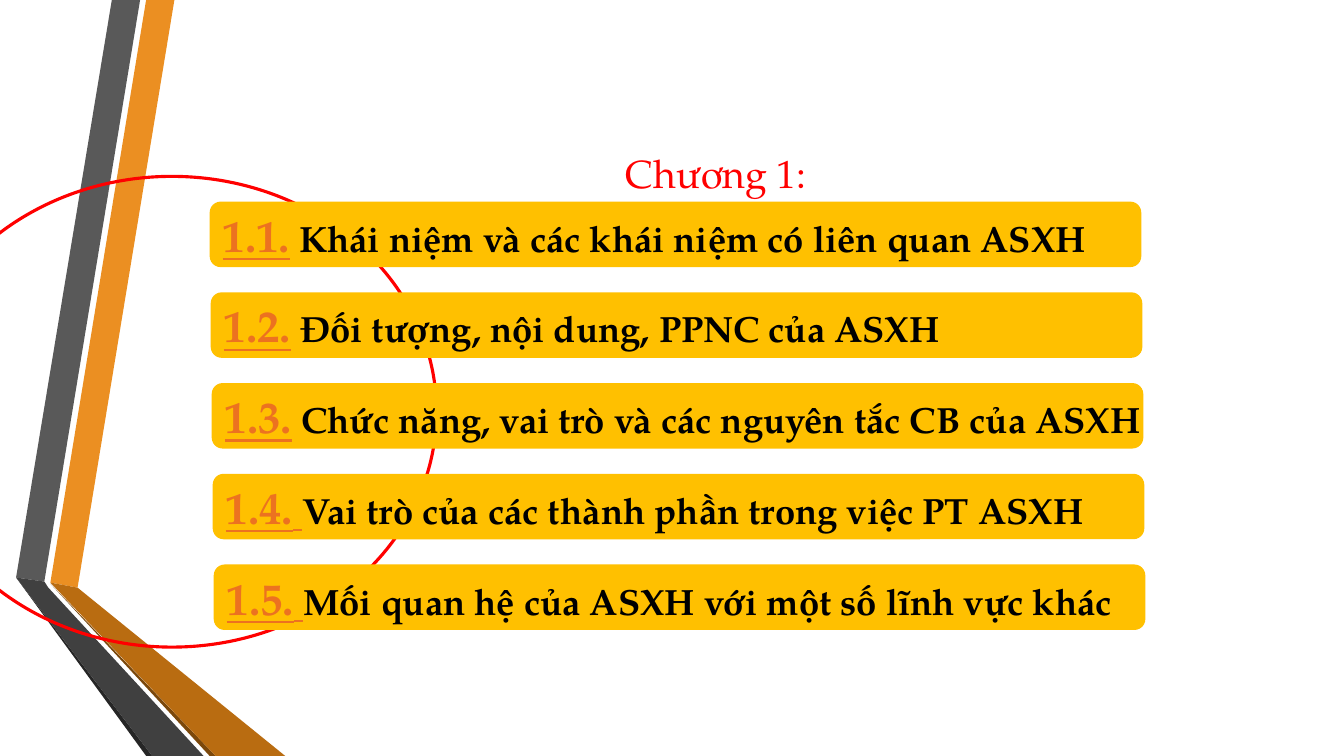
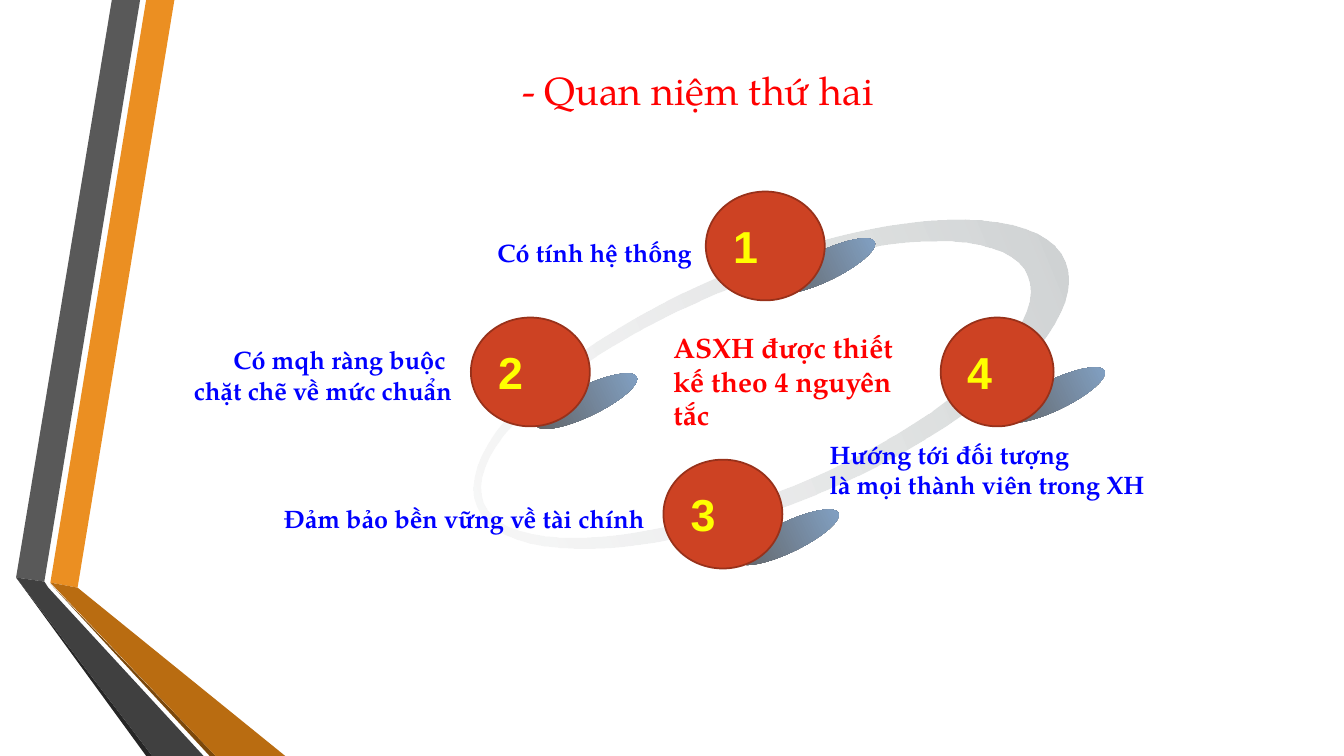
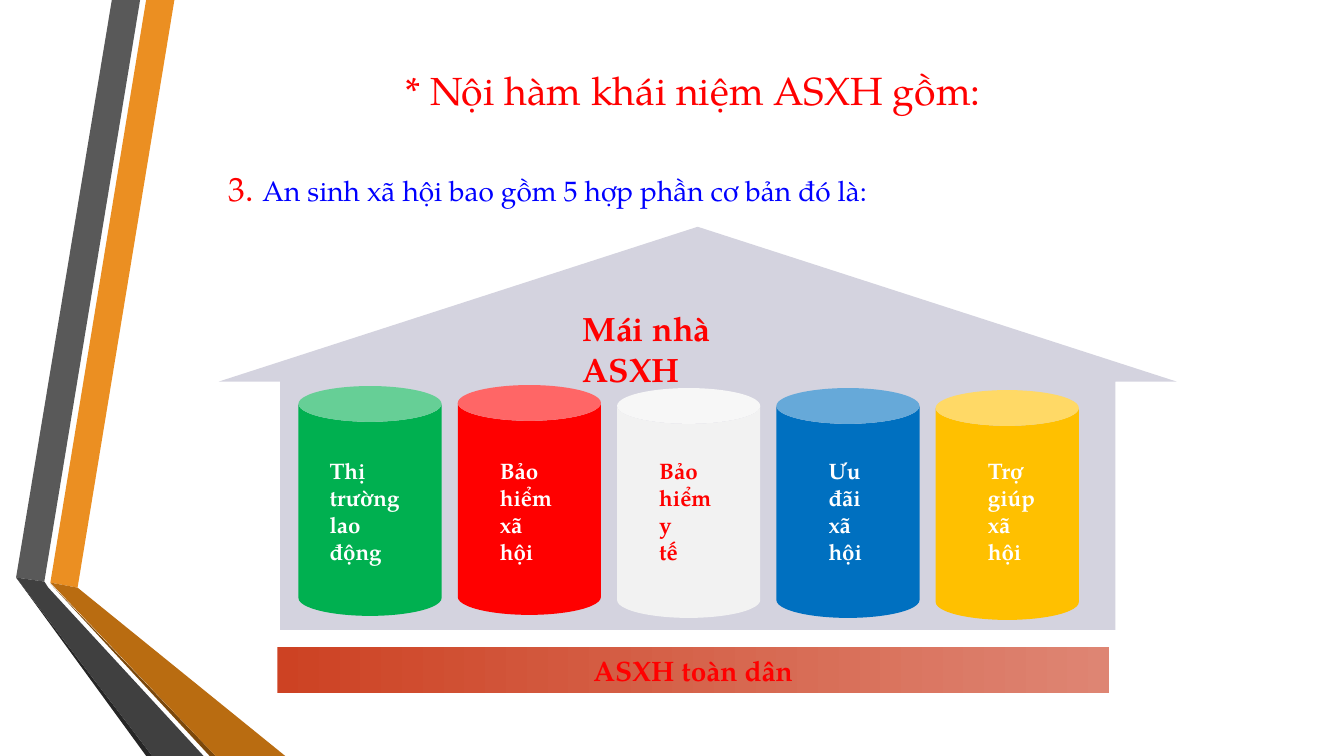
from math import cos, pi, sin

from lxml.etree import SubElement
from pptx import Presentation
from pptx.dml.color import RGBColor
from pptx.enum.shapes import MSO_SHAPE
from pptx.enum.text import MSO_ANCHOR, PP_ALIGN
from pptx.oxml.ns import qn
from pptx.util import Inches, Pt

SERIF = "TeX Gyre Pagella"
RED, BLUE, YELLOW, WHITE, BLACK = "FF0000", "0000FF", "FFFF00", "FFFFFF", "000000"
AMBER, ORANGE, BRICK, DARK_BRICK = "FFC000", "EC7220", "CD4223", "98311A"
rgb = RGBColor.from_string


def paint(shape, *fills, line=None, line_width=1.25):
    """No fill for no colour, a solid for one, a left-to-right gradient for two."""
    shape.shadow.inherit = False
    if len(fills) == 2:
        shape.fill.gradient()
        shape.fill.gradient_angle = 0
        for stop, position, color in zip(shape.fill.gradient_stops, (0, 1), fills):
            stop.position = position
            stop.color.rgb = rgb(color)
    elif fills:
        shape.fill.solid()
        shape.fill.fore_color.rgb = rgb(fills[0])
    else:
        shape.fill.background()
    if line:
        shape.line.color.rgb = rgb(line)
        shape.line.width = Pt(line_width)
    else:
        shape.line.fill.background()


def write(shape, *paragraphs, align=PP_ALIGN.LEFT, anchor=MSO_ANCHOR.TOP,
          bold=True, font=SERIF, wrap=True):
    """Each paragraph is a list of (text, size, colour) runs."""
    frame = shape.text_frame
    frame.word_wrap = wrap
    frame.vertical_anchor = anchor
    for index, runs in enumerate(paragraphs):
        paragraph = frame.add_paragraph() if index else frame.paragraphs[0]
        paragraph.alignment = align
        for text, size, color in runs:
            run = paragraph.add_run()
            run.text = text
            run.font.size = Pt(size)
            run.font.name = font
            run.font.bold = bold
            run.font.color.rgb = rgb(color)


prs = Presentation()
prs.slide_width, prs.slide_height = Inches(13.33), Inches(7.5)
layout = prs.slide_layouts[5]
layout_title = layout.placeholders[0]
layout_title.left, layout_title.top = Inches(2.17), Inches(0.58)
layout_title.width, layout_title.height = Inches(9.5), Inches(0.62)

slides = []
for heading in ("Chương 1:", "- Quan niệm thứ hai", "* Nội hàm khái niệm ASXH gồm: "):
    slide = prs.slides.add_slide(layout)
    write(slide.shapes.title, [(heading, 28, RED)], align=PP_ALIGN.CENTER,
          anchor=MSO_ANCHOR.MIDDLE, bold=False)
    slides.append(slide)
chapter, principles, house = (slide.shapes for slide in slides)

# Ribbons at the left edge, kept on the shared layout behind its placeholders
ribbons = [
    ("EB8F22", [(0.5, 5.78), (0.77, 5.83), (1.73, 0), (1.45, 0)]),
    ("595959", [(1.39, 0), (1.11, 0), (0.16, 5.73), (0.44, 5.77)]),
    ("262626", [(0.16, 5.73), (1.45, 7.5), (1.51, 7.5)]),
    ("7B480B", [(0.5, 5.79), (2.08, 7.5), (2.14, 7.5)]),
    ("B96C11", [(0.5, 5.78), (2.14, 7.5), (2.83, 7.5), (0.77, 5.83)]),
    ("404040", [(2.02, 7.5), (0.48, 5.83), (0.44, 5.77), (0.16, 5.73), (1.51, 7.5)]),
]
for depth, (color, corners) in enumerate(ribbons):
    points = [(Inches(x), Inches(y)) for x, y in corners]
    outline = chapter.build_freeform(*points[0])
    outline.add_line_segments(points[1:])
    ribbon = outline.convert_to_shape()
    paint(ribbon, color)
    layout.shapes.element.insert(2 + depth, ribbon.element)

# Slide 1: chapter contents
chapter_title = chapter.title
chapter_title.left, chapter_title.top = Inches(1.62), Inches(0.75)
chapter_title.width, chapter_title.height = Inches(10.96), Inches(1.92)
big_circle = chapter.add_shape(MSO_SHAPE.OVAL, Inches(-0.92), Inches(1.75),
                               Inches(5.25), Inches(4.67))
paint(big_circle, line=RED, line_width=2.25)

sections = [
    "Khái niệm và các khái niệm có liên quan ASXH",
    "Đối tượng, nội dung, PPNC của ASXH",
    "Chức năng, vai trò và các nguyên tắc CB của ASXH",
    "Vai trò của các thành phần trong việc PT ASXH",
    "Mối quan hệ của ASXH với một số lĩnh vực khác",
]
for index, section in enumerate(sections):
    bar = chapter.add_shape(MSO_SHAPE.ROUNDED_RECTANGLE, Inches(2.08 + 0.01 * index),
                            Inches(2 + 0.9 * index), Inches(9.24), Inches(0.65))
    paint(bar, AMBER)
    write(bar, [(f"1.{index + 1}.", 32, ORANGE), (" ", 26, ORANGE), (section, 26, BLACK)],
          anchor=MSO_ANCHOR.MIDDLE, wrap=False)
    number, gap, _ = bar.text_frame.paragraphs[0].runs
    number.font.underline = True
    gap.font.underline = index >= 3

# Slide 2: four principles on a tilted ring
contours = []
for center_x, center_y, radius_x, radius_y in ((7.65, 3.81, 3.16, 1.18), (7.49, 3.8, 2.92, 1.02)):
    angles = [2 * pi * step / 80 for step in range(80)]
    contours.append([(Inches(center_x + radius_x * cos(a)), Inches(center_y + radius_y * sin(a)))
                     for a in angles])
outer, inner = contours
outline = principles.build_freeform(*outer[0])
outline.add_line_segments(outer[1:])
outline.move_to(*inner[0])
outline.add_line_segments(inner[1:])
ring = outline.convert_to_shape()
paint(ring, "ECEDED", "CDD0D1")
ring.rotation = 337.4
ring_start = ring.element.xpath(".//a:gs/a:srgbClr")[0]
SubElement(ring_start, qn("a:alpha"), val="36000")

for left, top in ((7.62, 2.49), (9.9, 3.77), (7.26, 5.18), (5.26, 3.83)):
    ball_shadow = principles.add_shape(MSO_SHAPE.OVAL, Inches(left), Inches(top),
                                       Inches(1.11), Inches(0.3))
    paint(ball_shadow, "5F5F5F", "84A5CA")
    ball_shadow.rotation = 334.3

balls = [(7, 1.9, 1.18), (4.67, 3.15, 1.18), (6.58, 4.56, 1.18), (9.33, 3.15, 1.12)]
for number, (left, top, width) in enumerate(balls, 1):
    ball = principles.add_shape(MSO_SHAPE.OVAL, Inches(left), Inches(top),
                                Inches(width), Inches(1.08))
    paint(ball, BRICK, line=DARK_BRICK)
    write(ball, [(str(number), 32, YELLOW)], anchor=MSO_ANCHOR.MIDDLE, font="Arial", wrap=False)

labels = [
    (1.68, 3.37, 2.9, 0.7, PP_ALIGN.RIGHT, 18, BLUE, ["Có mqh ràng buộc ", "chặt chẽ về mức chuẩn"]),
    (4.58, 2.31, 2.38, 0.34, PP_ALIGN.RIGHT, 18, BLUE, ["Có tính hệ thống"]),
    (8.13, 4.31, 3.42, 0.71, PP_ALIGN.LEFT, 18, BLUE,
     ["Hướng tới đối tượng", "là mọi thành viên trong XH"]),
    (2.61, 4.94, 3.88, 0.4, PP_ALIGN.RIGHT, 18, BLUE, ["Đảm bảo bền vững về tài chính"]),
    (6.58, 3.23, 2.39, 1.11, PP_ALIGN.LEFT, 20, RED, ["ASXH được thiết kế theo 4 nguyên tắc"]),
]
for left, top, width, height, align, size, color, lines in labels:
    label = principles.add_textbox(Inches(left), Inches(top), Inches(width), Inches(height))
    write(label, *[[(line, size, color)] for line in lines], align=align)

# Slide 3: house of five pillars
intro = house.add_textbox(Inches(2.17), Inches(1.58), Inches(9), Inches(0.57))
write(intro, [("3. ", 24, RED), ("An sinh xã hội bao gồm 5 hợp phần cơ bản đó là:", 20, BLUE)],
      anchor=MSO_ANCHOR.MIDDLE, bold=False)

roof = house.add_shape(MSO_SHAPE.UP_ARROW, Inches(2.17), Inches(2.25), Inches(9.5), Inches(4))
roof.adjustments[0], roof.adjustments[1] = 0.872, 0.384
paint(roof, "D4D3DF")
roof_label = house.add_textbox(Inches(5.68), Inches(3.01), Inches(1.8), Inches(0.9))
write(roof_label, [("Mái nhà ASXH", 24, RED)])

pillars = [
    ("Thị trường lao động", "00B050", WHITE, 3.83, 3.17),
    ("Bảo hiểm xã hội", RED, WHITE, 3.82, 4.86),
    ("Bảo hiểm y tế", "F2F2F2", RED, 3.85, 6.44),
    ("Ưu đãi xã hội", "0070C0", WHITE, 3.85, 8.12),
    ("Trợ giúp xã hội", AMBER, WHITE, 3.87, 9.7),
]
for index, (name, color, text_color, top, text_left) in enumerate(pillars):
    pillar = house.add_shape(MSO_SHAPE.CAN, Inches(2.96 + 1.58 * index), Inches(top),
                             Inches(1.42), Inches(2.28))
    paint(pillar, color)
    pillar_label = house.add_textbox(Inches(text_left), Inches(4.49), Inches(1), Inches(1.18))
    write(pillar_label, *[[(word, 16, text_color)] for word in name.split()])

foundation = house.add_shape(MSO_SHAPE.RECTANGLE, Inches(2.75), Inches(6.42),
                             Inches(8.25), Inches(0.46))
paint(foundation, BRICK, "DE8573")
write(foundation, [("ASXH toàn dân", 20, RED)], align=PP_ALIGN.CENTER, anchor=MSO_ANCHOR.MIDDLE)

prs.save("out.pptx")
